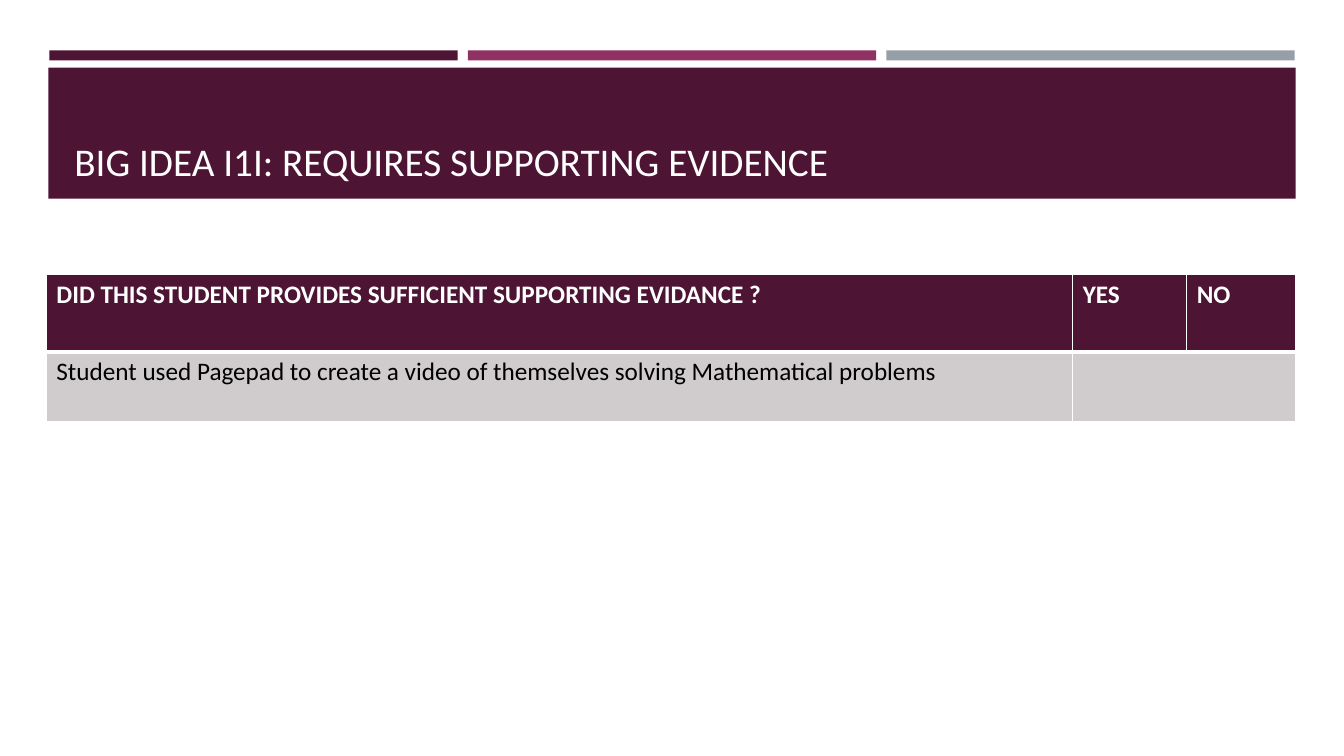
import pptx
import pptx.dml.color
import pptx.enum.shapes
import pptx.enum.text
import pptx.oxml.ns
import pptx.util
from lxml import etree

RGBColor = pptx.dml.color.RGBColor
Inches = pptx.util.Inches
Pt = pptx.util.Pt

PLUM = RGBColor(0x4D, 0x14, 0x34)
MAGENTA = RGBColor(0x90, 0x31, 0x63)
STEEL = RGBColor(0x96, 0x9F, 0xA7)
PALE = RGBColor(0xD0, 0xCC, 0xCE)
WHITE = RGBColor(0xFF, 0xFF, 0xFF)
BLACK = RGBColor(0, 0, 0)

FONT = "Calibri"
PAGE_WIDTH, PAGE_HEIGHT = 13.33, 7.5

# Three-column grid of the header
GRID_LEFT, GRID_TOP = 0.49, 0.5
COLUMN_WIDTH, COLUMN_GAP = 4.05, 0.1
STRIPE_HEIGHT = 0.1

# Evidence table
TABLE_LEFT, TABLE_TOP = 0.46, 2.72
TABLE_COLUMNS = (10.18, 1.13, 1.08)
TABLE_ROWS = (0.77, 0.69)
HEADINGS = ("DID THIS STUDENT PROVIDES SUFFICIENT SUPPORTING EVIDANCE ?", "YES", "NO")
EVIDENCE = "Student used Pagepad to create a video of themselves solving Mathematical problems"


def write_text(frame, text, size=18, color=BLACK, bold=False):
    span = frame.paragraphs[0].add_run()
    span.text = text
    span.font.name = FONT
    span.font.size = Pt(size)
    span.font.bold = bold
    span.font.color.rgb = color


def add_block(page, left, top, width, height, color):
    block = page.shapes.add_shape(
        pptx.enum.shapes.MSO_SHAPE.RECTANGLE,
        Inches(left), Inches(top), Inches(width), Inches(height))
    block.shadow.inherit = False
    block.fill.solid()
    block.fill.fore_color.rgb = color
    block.line.fill.background()


def add_title(page, text):
    box = page.shapes.add_textbox(Inches(0.64), Inches(0.77), Inches(12.06), Inches(1.11))
    box.text_frame.word_wrap = True
    box.text_frame.vertical_anchor = pptx.enum.text.MSO_ANCHOR.BOTTOM
    write_text(box.text_frame, text, size=28, color=WHITE)


def style_cell(cell, color, bottom=1):
    """Give a cell white borders and a solid fill."""
    properties = cell._tc.get_or_add_tcPr()
    for side, points in (("L", 1), ("R", 1), ("T", 1), ("B", bottom)):
        line = etree.SubElement(properties, pptx.oxml.ns.qn(f"a:ln{side}"), w=str(Pt(points)))
        fill = etree.SubElement(line, pptx.oxml.ns.qn("a:solidFill"))
        etree.SubElement(fill, pptx.oxml.ns.qn("a:srgbClr"), val=str(WHITE))
    cell.fill.solid()
    cell.fill.fore_color.rgb = color


def add_evidence_table(page):
    table = page.shapes.add_table(
        len(TABLE_ROWS), len(TABLE_COLUMNS), Inches(TABLE_LEFT), Inches(TABLE_TOP),
        Inches(sum(TABLE_COLUMNS)), Inches(sum(TABLE_ROWS))).table
    for column, width in zip(table.columns, TABLE_COLUMNS):
        column.width = Inches(width)
    for row, height in zip(table.rows, TABLE_ROWS):
        row.height = Inches(height)

    for index, heading in enumerate(HEADINGS):
        header, answer = table.cell(0, index), table.cell(1, index)
        style_cell(header, PLUM, bottom=3)
        style_cell(answer, PALE)
        answer.borders_top = None
        write_text(header.text_frame, heading, color=WHITE, bold=True)

    # The answer spans the YES and NO columns
    write_text(table.cell(1, 0).text_frame, EVIDENCE)
    table.cell(1, 1).merge(table.cell(1, 2))


def main():
    deck = pptx.Presentation()
    deck.slide_width = Inches(PAGE_WIDTH)
    deck.slide_height = Inches(PAGE_HEIGHT)
    page = deck.slides.add_slide(deck.slide_layouts[6])

    # Header stripes and title band
    for index, color in enumerate((PLUM, MAGENTA, STEEL)):
        left = GRID_LEFT + index * (COLUMN_WIDTH + COLUMN_GAP)
        add_block(page, left, GRID_TOP, COLUMN_WIDTH, STRIPE_HEIGHT, color)
    add_block(page, 0.48, 0.67, 12.37, 1.3, PLUM)
    add_title(page, "BIG IDEA I1I: REQUIRES SUPPORTING EVIDENCE")

    add_evidence_table(page)
    deck.save("out.pptx")


if __name__ == "__main__":
    main()
